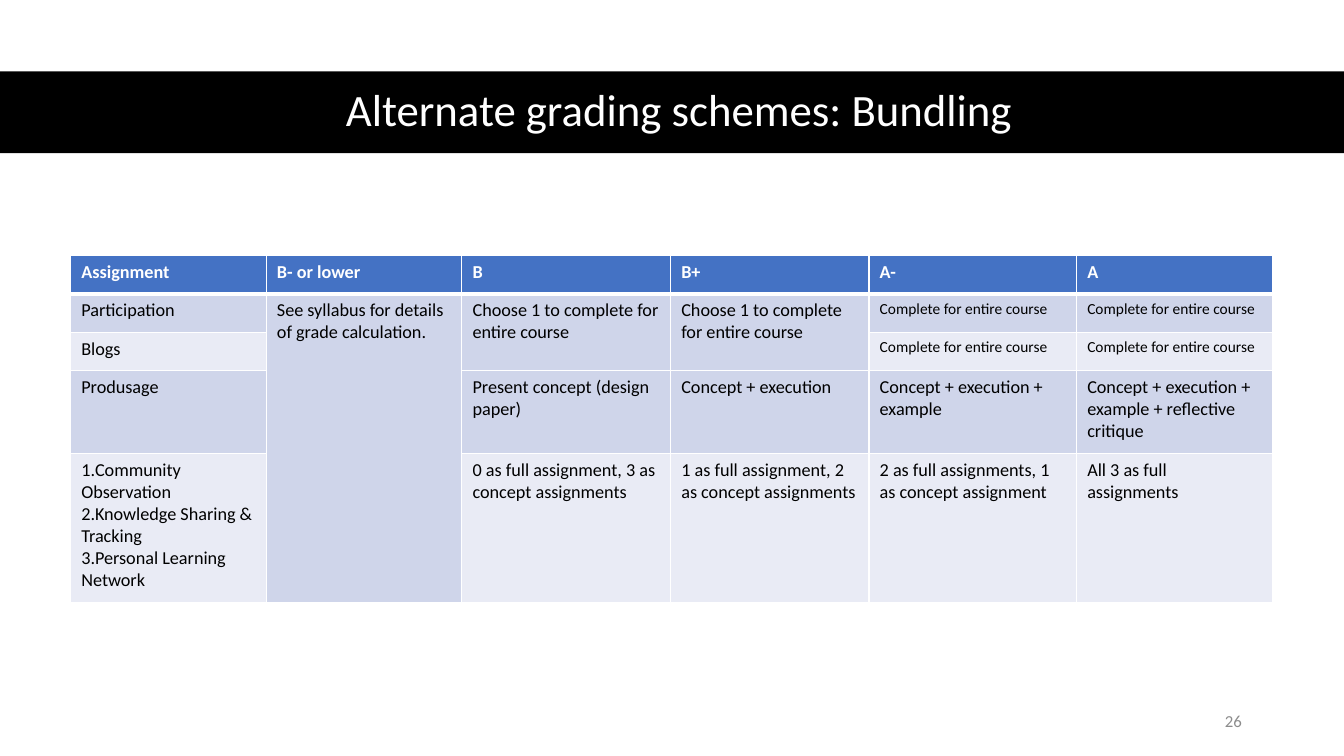
"""Build the slide on bundling as an alternate grading scheme."""
from dataclasses import dataclass

from lxml.etree import SubElement
from pptx import Presentation
from pptx.dml.color import RGBColor
from pptx.enum.shapes import MSO_SHAPE
from pptx.enum.text import MSO_ANCHOR, PP_ALIGN
from pptx.oxml.ns import qn
from pptx.slide import Slide
from pptx.table import Table, _Cell
from pptx.text.text import TextFrame, _Paragraph
from pptx.util import Cm, Pt

BLACK = RGBColor(0x00, 0x00, 0x00)
WHITE = RGBColor(0xFF, 0xFF, 0xFF)
GREY = RGBColor(0x8C, 0x8C, 0x8C)
HEADER_BLUE = RGBColor(0x44, 0x72, 0xC4)
BANDS = (RGBColor(0xCF, 0xD5, 0xEA), RGBColor(0xE9, 0xEB, 0xF5))
FONT = "Calibri"
BODY_SIZE = 13

COLUMN_WIDTHS = (4.93, 4.93, 5.26, 5.0, 5.23, 4.93)
ROW_HEIGHTS = (0.97, 0.97, 0.97, 2.08, 3.76)


@dataclass(frozen=True)
class Entry:
    """Content of one table cell."""

    text: str
    size: int = BODY_SIZE
    rows: int = 1
    numbered: bool = False


WHOLE_COURSE = Entry("Complete for entire course", size=11)
CHOOSE_ONE = Entry("Choose 1 to complete for entire course", rows=2)
HEADINGS = ("Assignment", "B- or lower", "B", "B+", "A-", "A")
GRADING: tuple[tuple[Entry | None, ...], ...] = (
    tuple(Entry(heading) for heading in HEADINGS),
    (
        Entry("Participation"),
        Entry("See syllabus for details of grade calculation.", rows=4),
        CHOOSE_ONE,
        CHOOSE_ONE,
        WHOLE_COURSE,
        WHOLE_COURSE,
    ),
    (Entry("Blogs"), None, None, None, WHOLE_COURSE, WHOLE_COURSE),
    (
        Entry("Produsage"),
        None,
        Entry("Present concept (design paper)"),
        Entry("Concept + execution"),
        Entry("Concept + execution + example"),
        Entry("Concept + execution + example + reflective critique"),
    ),
    (
        Entry(
            "Community Observation\nKnowledge Sharing & Tracking\nPersonal Learning Network",
            numbered=True,
        ),
        None,
        Entry("0 as full assignment, 3 as concept assignments"),
        Entry("1 as full assignment, 2 as concept assignments"),
        Entry("2 as full assignments, 1 as concept assignment"),
        Entry("All 3 as full assignments"),
    ),
)


def format_text(frame: TextFrame, size: int, color: RGBColor, bold: bool = False) -> None:
    """Format every run of a text frame."""
    for para in frame.paragraphs:
        for span in para.runs:
            span.font.name = FONT
            span.font.size = Pt(size)
            span.font.bold = bold
            span.font.color.rgb = color


def number_paragraph(para: _Paragraph, number: int) -> None:
    """Give a paragraph an automatic number without a hanging indent."""
    properties = para._p.get_or_add_pPr()
    properties.set("marL", "0")
    properties.set("indent", "0")
    SubElement(properties, qn("a:buAutoNum"), type="arabicPeriod", startAt=str(number))


def add_borders(cell: _Cell, is_header: bool, below_header: bool) -> None:
    """Draw white cell borders, heavier between header and body."""
    properties = cell._tc.get_or_add_tcPr()
    widths = {"L": 1, "R": 1, "T": 3 if below_header else 1, "B": 3 if is_header else 1}
    for side, width in widths.items():
        line = SubElement(properties, qn(f"a:ln{side}"), w=str(Pt(width)))
        fill = SubElement(line, qn("a:solidFill"))
        SubElement(fill, qn("a:srgbClr"), val=str(WHITE))


def fill_cell(table: Table, row: int, column: int, entry: Entry | None) -> None:
    """Format one cell and write its entry."""
    cell = table.cell(row, column)
    is_header = row == 0
    add_borders(cell, is_header, row == 1)
    cell.fill.solid()
    cell.fill.fore_color.rgb = HEADER_BLUE if is_header else BANDS[(row - 1) % 2]
    cell.margin_left = cell.margin_right = Cm(0.27)
    cell.margin_top = cell.margin_bottom = Cm(0.14)
    if entry is None:
        para = cell.text_frame.paragraphs[0]
        SubElement(para._p, qn("a:endParaRPr"), sz=str(BODY_SIZE * 100))
        return
    cell.text_frame.text = entry.text
    if entry.numbered:
        for number, para in enumerate(cell.text_frame.paragraphs, start=1):
            number_paragraph(para, number)
    format_text(cell.text_frame, entry.size, WHITE if is_header else BLACK, is_header)


def add_title(page: Slide, width: int) -> None:
    """Place the title on a black band across the slide."""
    band = page.shapes.add_shape(MSO_SHAPE.RECTANGLE, 0, Cm(1.8), width, Cm(2.06))
    band.shadow.inherit = False
    band.fill.solid()
    band.fill.fore_color.rgb = BLACK
    band.line.fill.background()
    title = page.shapes.title
    title._element.addprevious(band._element)
    title.left, title.top, title.width, title.height = Cm(1.55), Cm(1.78), Cm(31.14), Cm(2.06)
    title.text_frame.text = "Alternate grading schemes: Bundling"
    title.text_frame.vertical_anchor = MSO_ANCHOR.MIDDLE
    para = title.text_frame.paragraphs[0]
    para.alignment = PP_ALIGN.CENTER
    para.line_spacing = 0.9
    format_text(title.text_frame, 32, WHITE)


def add_grading_table(page: Slide) -> None:
    """Add the table of assignments and grades."""
    table = page.shapes.add_table(
        len(ROW_HEIGHTS), len(COLUMN_WIDTHS), Cm(1.78), Cm(6.43),
        Cm(sum(COLUMN_WIDTHS)), Cm(sum(ROW_HEIGHTS)),
    ).table
    for column, width in zip(table.columns, COLUMN_WIDTHS):
        column.width = Cm(width)
    for table_row, height in zip(table.rows, ROW_HEIGHTS):
        table_row.height = Cm(height)
    for row, entries in enumerate(GRADING):
        for column, entry in enumerate(entries):
            fill_cell(table, row, column, entry)
            if entry and entry.rows > 1:
                table.cell(row, column).merge(table.cell(row + entry.rows - 1, column))


def add_page_number(page: Slide) -> None:
    """Write the page number at the lower right."""
    box = page.shapes.add_textbox(Cm(23.93), Cm(17.65), Cm(7.62), Cm(1.02))
    frame = box.text_frame
    frame.word_wrap = True
    frame.vertical_anchor = MSO_ANCHOR.MIDDLE
    frame.text = "26"
    frame.paragraphs[0].alignment = PP_ALIGN.RIGHT
    format_text(frame, 12, GREY)


def main() -> None:
    """Build and save the deck."""
    deck = Presentation()
    deck.slide_width, deck.slide_height = Cm(33.87), Cm(19.05)
    page = deck.slides.add_slide(deck.slide_layouts[5])
    add_title(page, deck.slide_width)
    add_grading_table(page)
    add_page_number(page)
    deck.save("out.pptx")


if __name__ == "__main__":
    main()
